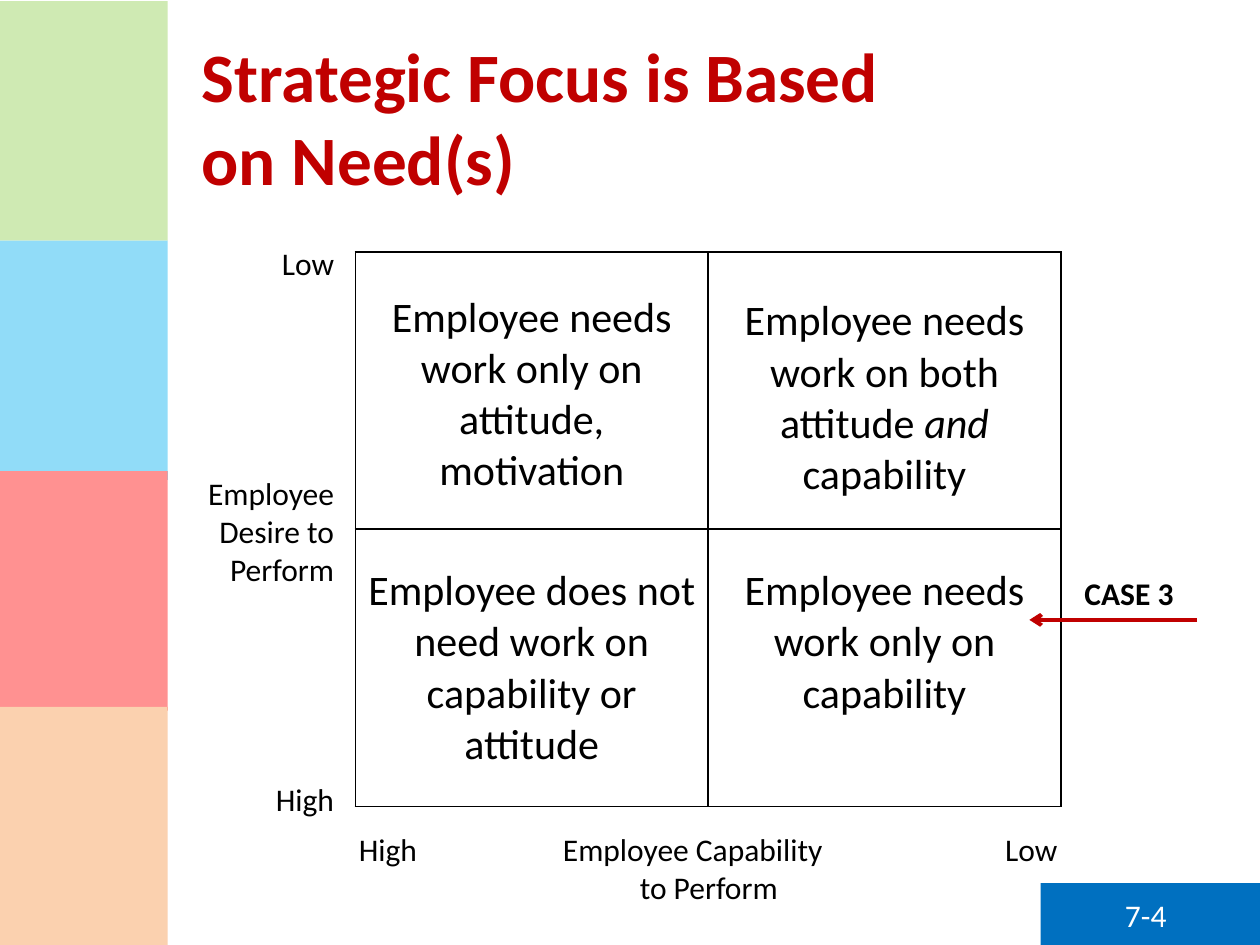
import pptx
import pptx.util
from lxml import etree
from pptx.dml.color import RGBColor
from pptx.enum.shapes import MSO_CONNECTOR, MSO_SHAPE
from pptx.enum.text import MSO_ANCHOR, PP_ALIGN
from pptx.oxml.ns import qn
from pptx.util import Inches

COLORS = {
    "green": "92D050",
    "sky": "00B0F0",
    "red": "FF0000",
    "orange": "F79646",
    "blue": "0070C0",
    "white": "FFFFFF",
    "black": "000000",
    "crimson": "C00000",
}
FONT = "Calibri"
LINE_HEIGHT = 1.22


def color(name):
    return RGBColor.from_string(COLORS[name])


def style_paragraph(paragraph, size, color_name, align=PP_ALIGN.LEFT, bold=False):
    paragraph.alignment = align
    paragraph.font.name = FONT
    paragraph.font.size = pptx.util.Pt(size)
    paragraph.font.bold = bold
    paragraph.font.color.rgb = color(color_name)


def add_block(slide, left, top, width, height, color_name, opacity=None):
    shape = slide.shapes.add_shape(
        MSO_SHAPE.RECTANGLE, Inches(left), Inches(top), Inches(width), Inches(height))
    shape.shadow.inherit = False
    shape.line.fill.background()
    shape.fill.solid()
    shape.fill.fore_color.rgb = color(color_name)
    if opacity is not None:
        fill_color = shape.fill._xPr.find(".//" + qn("a:srgbClr"))
        etree.SubElement(fill_color, qn("a:alpha"), val=str(opacity * 1000))


def add_text(slide, left, top, width, height, lines, color_name="black",
             align=PP_ALIGN.LEFT, bold=False):
    box = slide.shapes.add_textbox(
        Inches(left), Inches(top), Inches(width), Inches(height))
    frame = box.text_frame
    frame.word_wrap = True
    frame.text = "\n".join(lines)
    for paragraph in frame.paragraphs:
        style_paragraph(paragraph, 18, color_name, align, bold)
    return frame


def set_tab_stops(paragraph, positions):
    properties = paragraph._p.get_or_add_pPr()
    tab_list = etree.Element(qn("a:tabLst"))
    for position in positions:
        etree.SubElement(tab_list, qn("a:tab"), pos=str(Inches(position)), algn="l")
    properties.find(qn("a:defRPr")).addprevious(tab_list)


def set_borders(cell):
    properties = cell._tc.get_or_add_tcPr()
    for index, side in enumerate(("a:lnL", "a:lnR", "a:lnT", "a:lnB")):
        line = etree.Element(qn(side), w=str(pptx.util.Pt(1)))
        fill = etree.SubElement(line, qn("a:solidFill"))
        etree.SubElement(fill, qn("a:srgbClr"), val=COLORS["black"])
        properties.insert(index, line)


def fill_cell(cell, parts, top_margin):
    cell.fill.background()
    cell.margin_top = Inches(top_margin)
    paragraph = cell.text_frame.paragraphs[0]
    for index, part in enumerate(parts):
        for line_index, text in enumerate(part.split("\n")):
            if line_index:
                paragraph.add_line_break()
            run = paragraph.add_run()
            run.text = text
            if index == 1:
                run.font.italic = True
    style_paragraph(paragraph, 24, "black", PP_ALIGN.CENTER)
    set_borders(cell)


def add_matrix(slide):
    table = slide.shapes.add_table(
        2, 2, Inches(2.82), Inches(2), Inches(5.6), Inches(4.4)).table
    table.first_row = False
    table.horz_banding = False
    cells = [
        (["Employee needs\nwork only on\nattitude, motivation"], 0.32),
        (["Employee needs work on both attitude ", "and", " capability"], 0.35),
        (["Employee does not need work on capability or attitude"], 0.29),
        (["Employee needs work only on capability"], 0.29),
    ]
    for cell, (parts, top_margin) in zip(table.iter_cells(), cells):
        fill_cell(cell, parts, top_margin)


def add_axis_labels(slide):
    vertical = add_text(slide, 1.42, 1.89, 1.33, 4.64,
                        ["Low", "Employee", "Desire to", "Perform", "High"],
                        align=PP_ALIGN.RIGHT)
    for index in (1, 4):
        vertical.paragraphs[index].space_before = pptx.util.Pt(5 * 18 * LINE_HEIGHT)
    horizontal = add_text(slide, 2.75, 6.54, 5.83, 0.71,
                          ["High\tEmployee Capability\tLow", "\tto Perform"])
    for paragraph, stops in zip(horizontal.paragraphs, [(1.62, 5.13), (2.23,)]):
        set_tab_stops(paragraph, stops)


def add_arrow(slide, start_x, end_x, y):
    arrow = slide.shapes.add_connector(
        MSO_CONNECTOR.STRAIGHT, Inches(start_x), Inches(y), Inches(end_x), Inches(y))
    arrow.line.color.rgb = color("crimson")
    arrow.line.width = pptx.util.Pt(2.25)
    etree.SubElement(arrow.line._get_or_add_ln(), qn("a:tailEnd"), type="arrow")
    etree.SubElement(arrow._element.spPr, qn("a:effectLst"))


def set_title(slide, text):
    title = slide.shapes.title
    title.left, title.top = Inches(1.5), Inches(0.3)
    title.width, title.height = Inches(8), Inches(1.25)
    title.text_frame.text = text
    title.text_frame.vertical_anchor = MSO_ANCHOR.MIDDLE
    style_paragraph(title.text_frame.paragraphs[0], 39.6, "crimson", bold=True)


def main():
    presentation = pptx.Presentation()
    presentation.slide_width = Inches(10)
    presentation.slide_height = Inches(7.5)
    slide = presentation.slides.add_slide(presentation.slide_layouts[5])

    bands = [("green", 0.01), ("sky", 1.91), ("red", 3.74), ("orange", 5.61)]
    for color_name, top in bands:
        add_block(slide, 0, top, 1.33, 1.9, color_name)
    add_block(slide, 8.26, 7.01, 1.75, 0.5, "blue")
    add_block(slide, 0, 0, 1.33, 7.5, "white", opacity=57)

    set_title(slide, "Strategic Focus is Based\von Need(s)")
    add_matrix(slide)
    add_axis_labels(slide)
    add_text(slide, 8.83, 7.06, 0.75, 0.4, ["7-4"], "white")
    add_arrow(slide, 9.5, 8.17, 4.92)
    add_text(slide, 8.42, 4.51, 1.08, 0.4, ["CASE 3"],
             align=PP_ALIGN.CENTER, bold=True)

    presentation.save("out.pptx")


if __name__ == "__main__":
    main()
